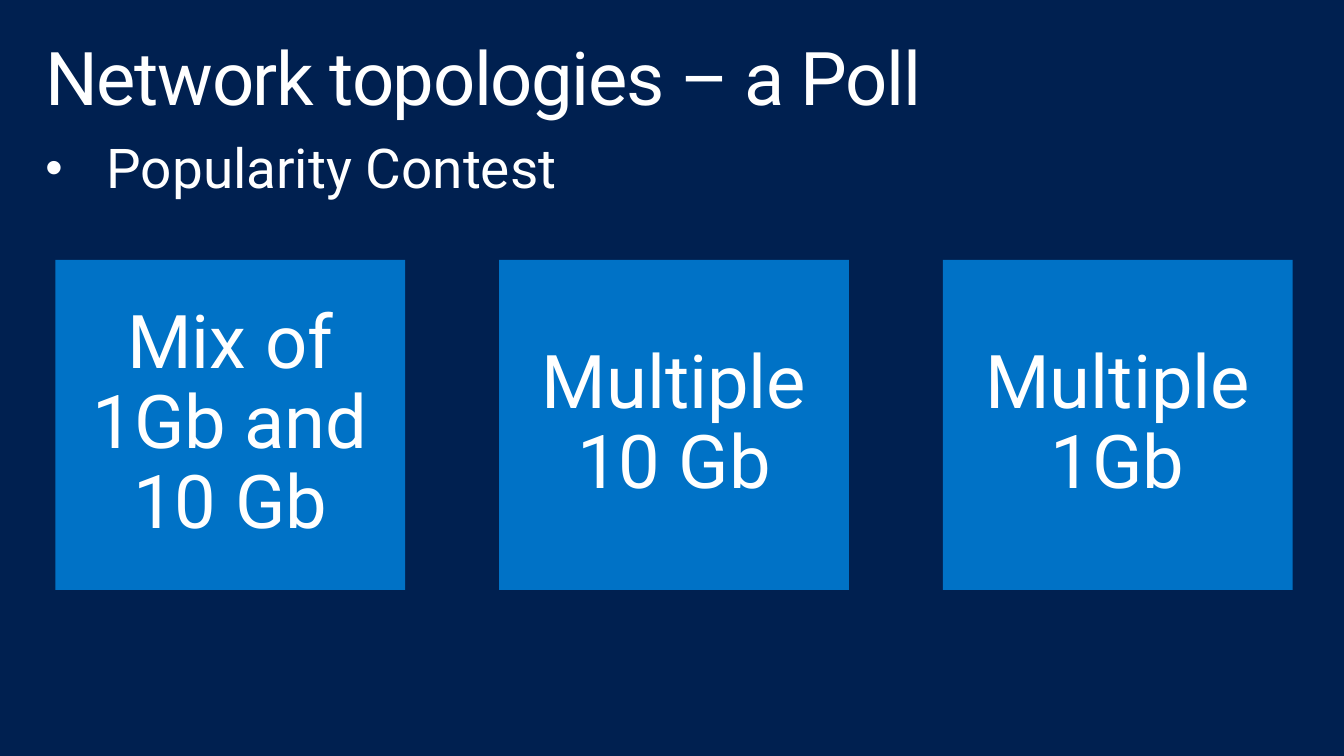
from dataclasses import dataclass

from lxml.etree import SubElement
from pptx import Presentation
from pptx.dml.color import RGBColor
from pptx.enum.shapes import MSO_SHAPE as Preset
from pptx.enum.text import MSO_ANCHOR as Anchor, MSO_AUTO_SIZE as AutoSize, PP_ALIGN as Align
from pptx.oxml.ns import qn
from pptx.util import Emu, Pt

EMU_PER_PX = 9144  # 100 px to the inch
FONT = "Roboto"
NAVY, BLUE, WHITE = "002050", "0072C6", "FFFFFF"
CARD_LEFT, CARD_TOP, CARD_WIDTH, CARD_HEIGHT, CARD_STEP = 56, 263, 354, 334, 449


@dataclass(frozen=True)
class TextStyle:
    size: int
    align: Align
    anchor: Anchor
    inset_x: int
    inset_y: int
    auto_size: AutoSize = AutoSize.NONE


TITLE = TextStyle(54, Align.LEFT, Anchor.TOP, 16, 10)
BODY = TextStyle(40, Align.LEFT, Anchor.TOP, 16, 10, AutoSize.SHAPE_TO_FIT_TEXT)
CARD = TextStyle(54, Align.CENTER, Anchor.MIDDLE, 20, 16)

POLL_OPTIONS: list[tuple[str, ...]] = [
    ("Mix of 1Gb and 10 Gb",),
    ("Multiple", "10 Gb"),
    ("Multiple", "1Gb"),
]


def px(length: int) -> Emu:
    return Emu(length * EMU_PER_PX)


def paint(fill, color: str) -> None:
    fill.solid()
    fill.fore_color.rgb = RGBColor.from_string(color)


def place(box, left: int, top: int, width: int, height: int) -> None:
    box.left, box.top, box.width, box.height = map(px, (left, top, width, height))


def write(box, lines: tuple[str, ...], style: TextStyle) -> None:
    frame = box.text_frame
    frame.word_wrap = True
    frame.auto_size = style.auto_size
    frame.vertical_anchor = style.anchor
    frame.margin_left = frame.margin_right = px(style.inset_x)
    frame.margin_top = frame.margin_bottom = px(style.inset_y)
    for index, line in enumerate(lines):
        para = frame.add_paragraph() if index else frame.paragraphs[0]
        para.alignment = style.align
        para.line_spacing = 0.9
        span = para.add_run()
        span.text = line
        span.font.name = FONT
        span.font.size = Pt(style.size)
        paint(span.font.fill, WHITE)


def add_bullet(para, indent: int) -> None:
    props = para._p.get_or_add_pPr()
    props.set("marL", str(px(indent)))
    props.set("indent", str(px(-indent)))
    SubElement(props, qn("a:buSzPct"), val="90000")
    SubElement(props, qn("a:buFont"), typeface="Arial")
    SubElement(props, qn("a:buChar"), char="•")


def add_card(page, column: int, lines: tuple[str, ...]) -> None:
    left = CARD_LEFT + column * CARD_STEP
    bounds = map(px, (left, CARD_TOP, CARD_WIDTH, CARD_HEIGHT))
    box = page.shapes.add_shape(Preset.RECTANGLE, *bounds)
    box.shadow.inherit = False
    paint(box.fill, BLUE)
    box.line.fill.background()
    write(box, lines, CARD)


def main() -> None:
    deck = Presentation()
    deck.slide_width, deck.slide_height = px(1360), px(765)
    page = deck.slides.add_slide(deck.slide_layouts[1])
    paint(page.background.fill, NAVY)

    # Title, with slightly tightened letters
    title = page.shapes.title
    place(title, 30, 32, 1300, 100)
    write(title, ("Network topologies – a Poll",), TITLE)
    title.text_frame.paragraphs[0].runs[0]._r.get_or_add_rPr().set("spc", "-100")

    # Bulleted subtitle
    body = page.placeholders[1]
    place(body, 30, 133, 1300, 81)
    write(body, ("Popularity Contest",), BODY)
    add_bullet(body.text_frame.paragraphs[0], 62)

    # Poll options
    for column, lines in enumerate(POLL_OPTIONS):
        add_card(page, column, lines)

    deck.save("out.pptx")


if __name__ == "__main__":
    main()
